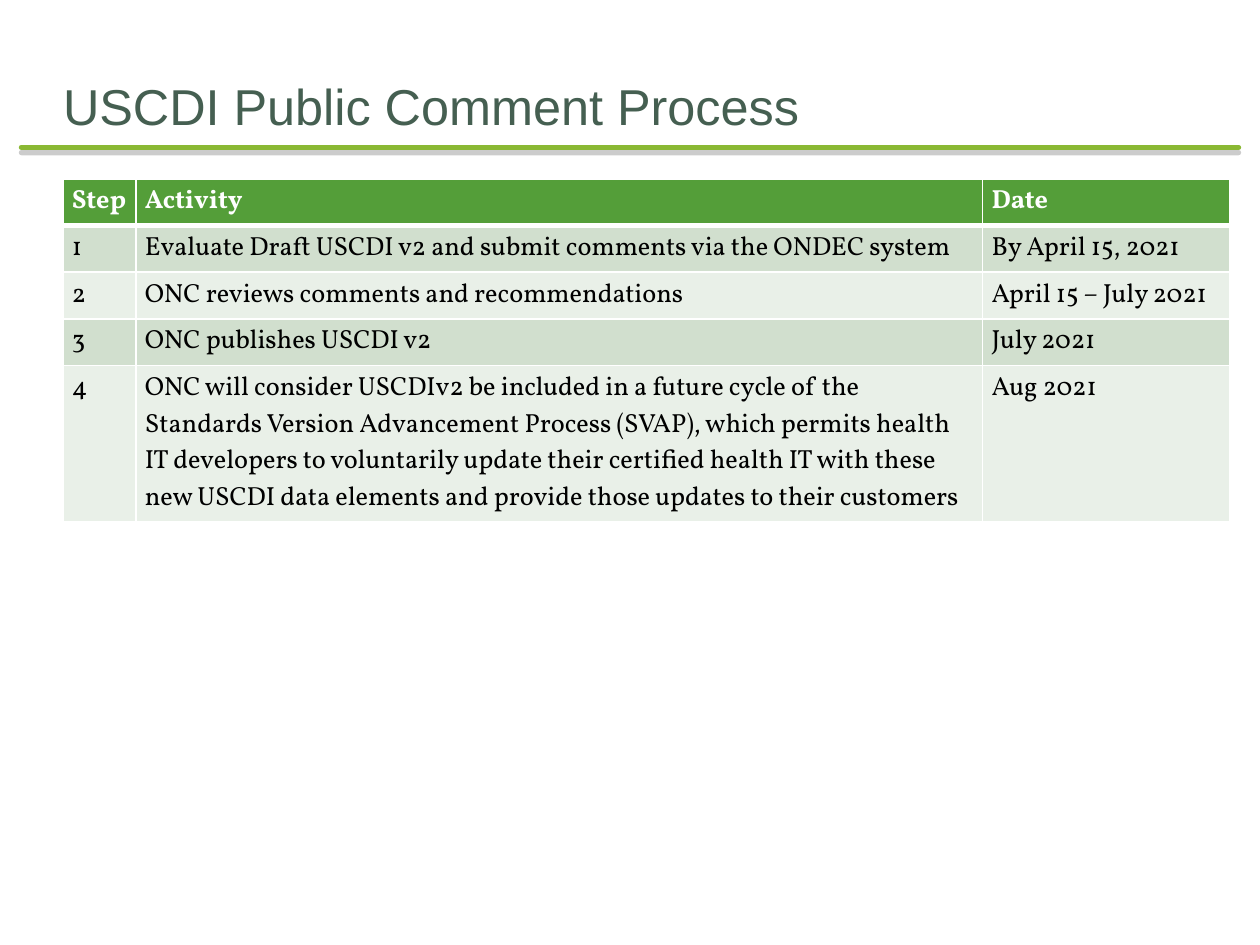
from dataclasses import dataclass

from lxml import etree
from pptx import Presentation
from pptx.dml.color import RGBColor
from pptx.enum.shapes import MSO_CONNECTOR
from pptx.enum.text import MSO_ANCHOR, MSO_AUTO_SIZE, PP_ALIGN
from pptx.oxml.ns import qn
from pptx.util import Inches, Pt

STRAIGHT = MSO_CONNECTOR.STRAIGHT
TOP, BOTTOM = MSO_ANCHOR.TOP, MSO_ANCHOR.BOTTOM
LEFT = PP_ALIGN.LEFT
NO_AUTOFIT = MSO_AUTO_SIZE.NONE


@dataclass(frozen=True)
class Theme:
    title_font: str = "Arial"
    table_font: str = "Vollkorn"
    title_size: float = 28.8
    table_size: float = 15
    title: str = "455F51"
    rule: str = "8AB833"
    shadow: str = "808080"
    header: str = "549E39"
    bands: tuple = ("D1DFCE", "E9F0E8")
    light: str = "FFFFFF"
    dark: str = "000000"


THEME = Theme()
WIDTH, HEIGHT = 10, 7.5
MARGIN = 0.05 * WIDTH
RULE_INSET, RULE_TOP = 0.17, 1.17
TABLE_TOP = 1.42
COLUMN_WIDTHS = (0.58, 6.72, 1.96)
LINE_ROW, LONG_ROW = 0.33, 1.07

TITLE = "USCDI Public Comment Process"
HEADINGS = ("Step", "Activity", "Date")
STEPS = [
    ("Evaluate Draft USCDI v2 and submit comments via the ONDEC system", "By April 15, 2021"),
    ("ONC reviews comments and recommendations", "April 15 – July 2021"),
    ("ONC publishes USCDI v2", "July 2021"),
    ("ONC will consider USCDIv2 be included in a future cycle of the Standards Version "
     "Advancement Process (SVAP), which permits health IT developers to voluntarily update "
     "their certified health IT with these new USCDI data elements and provide those updates "
     "to their customers", "Aug 2021"),
]


def add_span(para, text, font, size, color, bold=False):
    para.alignment = LEFT
    span = para.add_run()
    span.text = text
    span.font.name = font
    span.font.size = Pt(size)
    span.font.bold = bold
    span.font.color.rgb = RGBColor.from_string(color)


def add_color(parent, color):
    return etree.SubElement(parent, qn("a:srgbClr"), val=color)


def set_margins(target, left, top, right, bottom):
    target.margin_left, target.margin_top = Inches(left), Inches(top)
    target.margin_right, target.margin_bottom = Inches(right), Inches(bottom)


def add_rule(page):
    rule = page.shapes.add_connector(
        STRAIGHT, Inches(RULE_INSET), Inches(RULE_TOP),
        Inches(WIDTH - RULE_INSET), Inches(RULE_TOP))
    rule.line.color.rgb = RGBColor.from_string(THEME.rule)
    rule.line.width = Pt(3)
    rule.line._ln.set("cap", "rnd")
    effects = etree.SubElement(rule._element.spPr, qn("a:effectLst"))
    shadow = etree.SubElement(effects, qn("a:outerShdw"), blurRad="0",
                              dist=str(Pt(3)), dir="5400000", rotWithShape="0")
    etree.SubElement(add_color(shadow, THEME.shadow), qn("a:alpha"), val="40000")


def add_title(page):
    box = page.shapes.title
    box.left, box.top = Inches(MARGIN), Inches(0.5)
    box.width, box.height = Inches(WIDTH - 2 * MARGIN), Inches(0.58)
    frame = box.text_frame
    frame.auto_size = NO_AUTOFIT
    frame.word_wrap = True
    frame.vertical_anchor = BOTTOM
    set_margins(frame, 0, 0.05, 0, 0)
    add_span(frame.paragraphs[0], TITLE, THEME.title_font, THEME.title_size, THEME.title)


def set_borders(cell, top, bottom):
    properties = cell._tc.get_or_add_tcPr()
    for side, width in (("L", 1), ("R", 1), ("T", top), ("B", bottom)):
        border = etree.SubElement(properties, qn(f"a:ln{side}"), w=str(Pt(width)))
        add_color(etree.SubElement(border, qn("a:solidFill")), THEME.light)


def add_steps_table(page):
    rows = [HEADINGS] + [(str(number), *step) for number, step in enumerate(STEPS, 1)]
    heights = [LINE_ROW] * len(STEPS) + [LONG_ROW]
    table = page.shapes.add_table(
        len(rows), len(HEADINGS), Inches(MARGIN), Inches(TABLE_TOP),
        Inches(sum(COLUMN_WIDTHS)), Inches(sum(heights))).table
    for column, width in zip(table.columns, COLUMN_WIDTHS):
        column.width = Inches(width)
    for index, (texts, height) in enumerate(zip(rows, heights)):
        table.rows[index].height = Inches(height)
        heading = index == 0
        fill = THEME.header if heading else THEME.bands[(index - 1) % 2]
        for position, text in enumerate(texts):
            cell = table.cell(index, position)
            set_margins(cell, 0.07, 0.04, 0.07, 0.04)
            cell.vertical_anchor = TOP
            set_borders(cell, 3 if index == 1 else 1, 3 if heading else 1)
            cell.fill.solid()
            cell.fill.fore_color.rgb = RGBColor.from_string(fill)
            add_span(cell.text_frame.paragraphs[0], text, THEME.table_font,
                     THEME.table_size, THEME.light if heading else THEME.dark, heading)


def main():
    deck = Presentation()
    deck.slide_width, deck.slide_height = Inches(WIDTH), Inches(HEIGHT)
    page = deck.slides.add_slide(deck.slide_layouts[5])
    add_rule(page)
    add_title(page)
    add_steps_table(page)
    deck.save("out.pptx")


if __name__ == "__main__":
    main()
